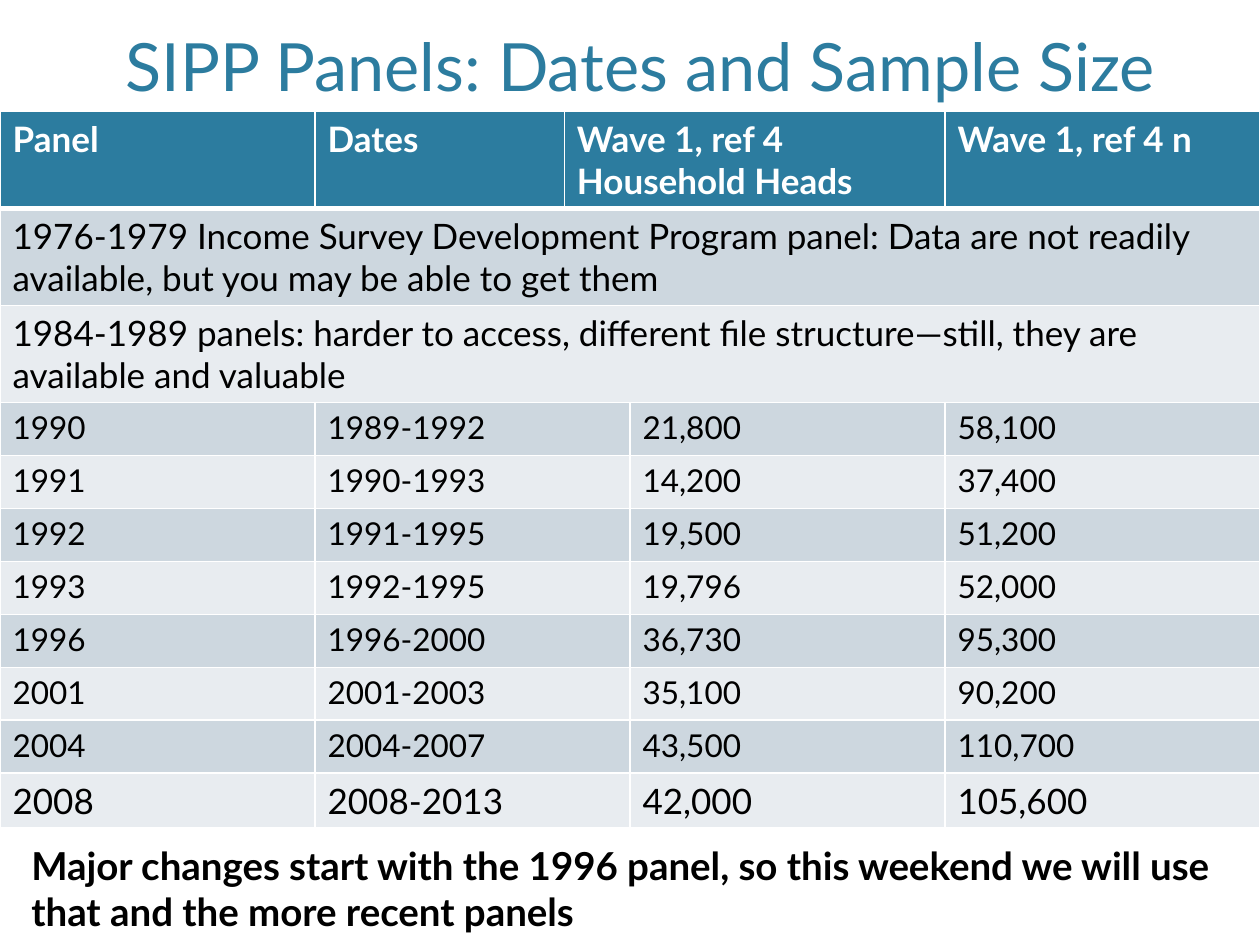
from lxml import etree
from pptx import Presentation
from pptx import util as u
from pptx.dml.color import RGBColor
from pptx.enum import text
from pptx.oxml import ns

FONT = "Lato"
TEAL, WHITE, BLACK = "2C7C9F", "FFFFFF", "000000"
BANDS = ("CDD7DF", "E8ECF0")
COLUMN_WIDTHS = (180, 142.5, 37.5, 180, 180)
TALL_ROW, SHORT_ROW = 55.2, 30.3

HEADERS = ("Panel", "Dates", "Wave 1, ref 4 Household Heads", "Wave 1, ref 4 n")
REMARKS = (
    "1976-1979 Income Survey Development Program panel: Data are not readily "
    "available, but you may be able to get them",
    "1984-1989 panels: harder to access, different file structure—still, they are "
    "available and valuable",
)
PANELS = (
    ("1990", "1989-1992", "21,800", "58,100"),
    ("1991", "1990-1993", "14,200", "37,400"),
    ("1992", "1991-1995", "19,500", "51,200"),
    ("1993", "1992-1995", "19,796", "52,000"),
    ("1996", "1996-2000", "36,730", "95,300"),
    ("2001", "2001-2003", "35,100", "90,200"),
    ("2004", "2004-2007", "43,500", "110,700"),
    ("2008", "2008-2013", "42,000", "105,600"),
)
HEADER_SPANS = ((0, 0), (1, 1), (2, 3), (4, 4))
REMARK_SPANS = ((0, 4),)
PANEL_SPANS = ((0, 0), (1, 2), (3, 3), (4, 4))


def colour(value):
    """Turn a hex string into a colour."""
    return RGBColor.from_string(value)


def write(frame, words, size=20, ink=BLACK, bold=False, align=None):
    """Put one formatted paragraph in a text frame."""
    frame.word_wrap = True
    para = frame.paragraphs[0]
    para.alignment = align
    span = para.add_run()
    span.text = words
    span.font.name = FONT
    span.font.size = u.Pt(size)
    span.font.bold = bold
    span.font.color.rgb = colour(ink)


def place(shape, left, top, width, height):
    """Move and size a shape, in points."""
    shape.left, shape.top = u.Pt(left), u.Pt(top)
    shape.width, shape.height = u.Pt(width), u.Pt(height)


def paint_cell(cell, fill, bottom=1):
    """Give a cell its fill and white borders."""
    properties = cell._tc.get_or_add_tcPr()
    for side, weight in (("L", 1), ("R", 1), ("T", 1), ("B", bottom)):
        line = etree.SubElement(properties, ns.qn(f"a:ln{side}"), w=str(u.Pt(weight)))
        solid = etree.SubElement(line, ns.qn("a:solidFill"))
        etree.SubElement(solid, ns.qn("a:srgbClr"), val=WHITE)
    cell.fill.solid()
    cell.fill.fore_color.rgb = colour(fill)


def fill_row(table, index, height, words, spans, fill, bottom=1, **style):
    """Paint one row, merge its spans and write its cells."""
    table.rows[index].height = u.Pt(height)
    for cell in table.rows[index].cells:
        paint_cell(cell, fill, bottom)
    for entry, (first, last) in zip(words, spans):
        cell = table.cell(index, first)
        if last > first:
            cell.merge(table.cell(index, last))
        write(cell.text_frame, entry, **style)


def add_panel_table(page):
    """Add the table of panels, dates and sample sizes."""
    count = 1 + len(REMARKS) + len(PANELS)
    height = TALL_ROW * (1 + len(REMARKS)) + SHORT_ROW * len(PANELS)
    frame = page.shapes.add_table(count, len(COLUMN_WIDTHS), u.Pt(0), u.Pt(63.5),
                                  u.Pt(720), u.Pt(height))
    table = frame.table
    for column, width in zip(table.columns, COLUMN_WIDTHS):
        column.width = u.Pt(width)
    fill_row(table, 0, TALL_ROW, HEADERS, HEADER_SPANS, TEAL, bottom=3,
             ink=WHITE, bold=True)
    body = [(TALL_ROW, (remark,), REMARK_SPANS, 20) for remark in REMARKS]
    body += [(SHORT_ROW, panel, PANEL_SPANS, 18) for panel in PANELS[:-1]]
    body.append((SHORT_ROW, PANELS[-1], PANEL_SPANS, 20))
    for index, (row_height, words, spans, size) in enumerate(body, start=1):
        fill_row(table, index, row_height, words, spans, BANDS[(index - 1) % 2],
                 size=size)


def add_title(page, words):
    """Fill the title placeholder."""
    title = page.shapes.title
    place(title, 24, 8.5, 684, 55)
    title.text_frame.auto_size = text.MSO_AUTO_SIZE.NONE
    title.text_frame.vertical_anchor = text.MSO_ANCHOR.BOTTOM
    write(title.text_frame, words, size=38, ink=TEAL, align=text.PP_ALIGN.CENTER)


def add_note(page, words):
    """Add the closing remark below the table."""
    box = page.shapes.add_textbox(u.Pt(10.8), u.Pt(477.5), u.Pt(709.2), u.Pt(60.5))
    write(box.text_frame, words, size=22, bold=True)
    box.text_frame.auto_size = text.MSO_AUTO_SIZE.SHAPE_TO_FIT_TEXT


def main():
    """Build and save the slide."""
    deck = Presentation()
    deck.slide_width, deck.slide_height = u.Pt(720), u.Pt(540)
    page = deck.slides.add_slide(deck.slide_layouts.get_by_name("Title Only"))
    add_title(page, "SIPP Panels: Dates and Sample Size")
    add_panel_table(page)
    add_note(page, "Major changes start with the 1996 panel, so this weekend we will "
                   "use that and the more recent panels")
    deck.save("out.pptx")


if __name__ == "__main__":
    main()
